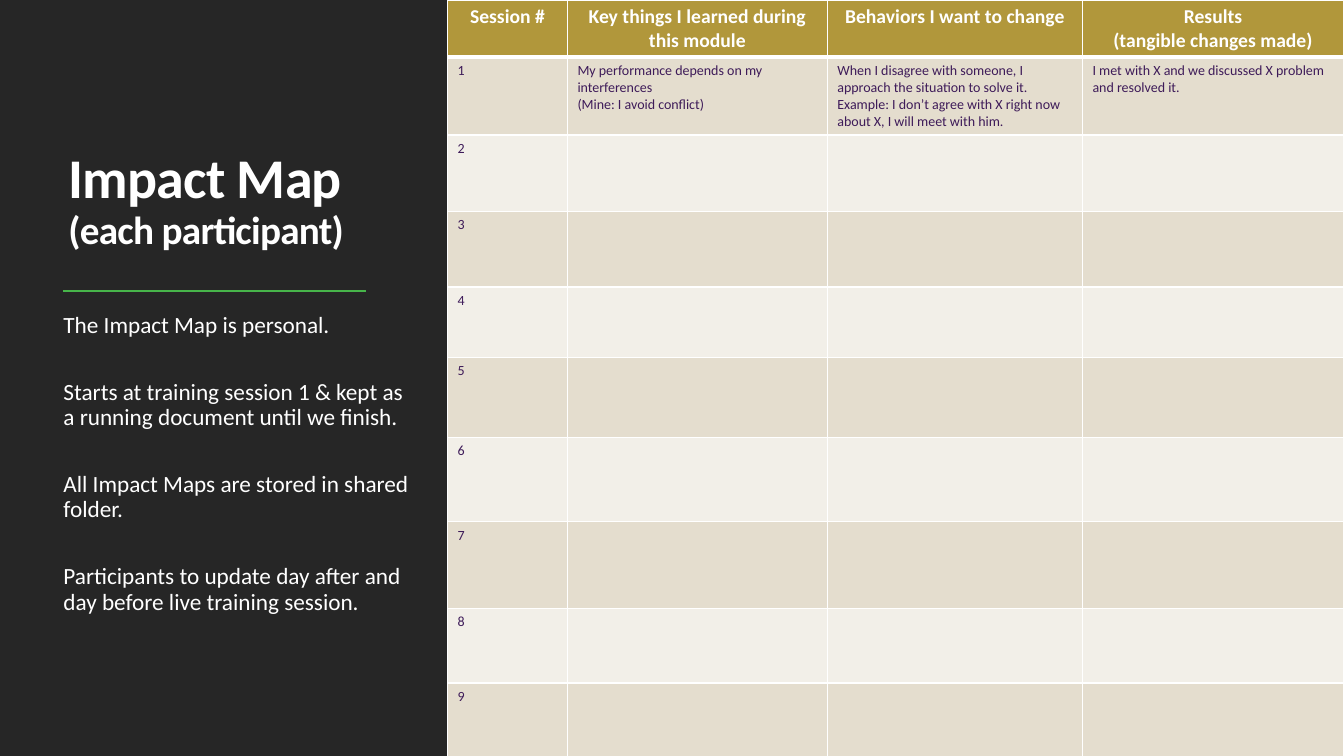
from lxml import etree
from pptx import Presentation
from pptx.dml.color import RGBColor
from pptx.enum.shapes import MSO_CONNECTOR, MSO_SHAPE
from pptx.enum.text import MSO_ANCHOR, MSO_AUTO_SIZE, PP_ALIGN
from pptx.oxml.ns import qn
from pptx.util import Cm, Pt

LEFT, CENTER = PP_ALIGN.LEFT, PP_ALIGN.CENTER
BOTTOM = MSO_ANCHOR.BOTTOM
NO_AUTOFIT = MSO_AUTO_SIZE.NONE
RECTANGLE = MSO_SHAPE.RECTANGLE
STRAIGHT = MSO_CONNECTOR.STRAIGHT

FONT = "Calibri"
WHITE, CHARCOAL, GREEN = "FFFFFF", "262626", "47B54A"
GOLD, PURPLE = "B1973B", "3E1B59"
BANDS = ["E4DDCE", "F2EFE8"]

HEADING = [[("Impact Map ", 40), ("(each participant)", 28)]]
GUIDELINES = [
    "The Impact Map is personal.",
    "Starts at training session 1 & kept as a running document until we finish.",
    "All Impact Maps are stored in shared folder.",
    "Participants to update day after and day before live training session.",
]
HEADERS = [
    ["Session #"],
    ["Key things I learned during this module"],
    ["Behaviors I want to change"],
    ["Results", "(tangible changes made)"],
]
EXAMPLE = [
    ["My performance depends on my interferences", "(Mine: I avoid conflict)"],
    ["When I disagree with someone, I approach the situation to solve it.",
     "Example: I don’t agree with X right now about X, I will meet with him."],
    ["I met with X and we discussed X problem and resolved it."],
]
SESSIONS = 9
COLUMN_WIDTHS = [3.02, 6.55, 6.43, 6.58]
ROW_HEIGHTS = [1.42, 1.96, 1.93, 1.9, 1.78, 2.01, 2.13, 2.18, 1.88, 1.86]

SLIDE_WIDTH, SLIDE_HEIGHT = 33.87, 19.05
PANEL_WIDTH = 11.28
HEADING_BOX = (1.47, 1.07, 8.56, 5.44)
GUIDELINES_BOX = (1.6, 7.77, 8.71, 8.86)
RULE_LEFT, RULE_RIGHT, RULE_TOP = 1.6, 9.22, 7.34


def rgb(hex_color):
    return RGBColor.from_string(hex_color)


def write(frame, paragraphs, size=10, color=WHITE, bold=False, align=LEFT,
          line_spacing=None, space_after=0, tracking=0):
    frame.word_wrap = True
    for index, content in enumerate(paragraphs):
        paragraph = frame.paragraphs[0] if index == 0 else frame.add_paragraph()
        paragraph.alignment = align
        paragraph.line_spacing = line_spacing
        paragraph.space_before = Pt(0)
        paragraph.space_after = Pt(space_after)
        pieces = [(content, size)] if isinstance(content, str) else content
        for text, points in pieces:
            run = paragraph.add_run()
            run.text = text
            run.font.name = FONT
            run.font.size = Pt(points)
            run.font.bold = bold
            run.font.color.rgb = rgb(color)
            if tracking:
                run.font._element.set("spc", str(round(tracking * 100)))


def add_borders(cell, widths):
    properties = cell._tc.get_or_add_tcPr()
    for side, points in zip("LRTB", widths):
        border = etree.SubElement(properties, qn(f"a:ln{side}"), w=str(Pt(points)))
        fill = etree.SubElement(border, qn("a:solidFill"))
        etree.SubElement(fill, qn("a:srgbClr"), val=WHITE)


def add_panel(slide):
    panel = slide.shapes.add_shape(RECTANGLE, 0, 0, Cm(PANEL_WIDTH), Cm(SLIDE_HEIGHT))
    panel.shadow.inherit = False
    panel.fill.solid()
    panel.fill.fore_color.rgb = rgb(CHARCOAL)
    panel.line.fill.background()

    heading = slide.shapes.title
    slide.shapes._spTree.append(heading._element)
    heading.left, heading.top, heading.width, heading.height = map(Cm, HEADING_BOX)
    heading.text_frame.auto_size = NO_AUTOFIT
    heading.text_frame.vertical_anchor = BOTTOM
    write(heading.text_frame, HEADING, bold=True, line_spacing=0.9,
          space_after=6, tracking=-0.5)

    rule = slide.shapes.add_connector(
        STRAIGHT, Cm(RULE_LEFT), Cm(RULE_TOP), Cm(RULE_RIGHT), Cm(RULE_TOP))
    rule.line.color.rgb = rgb(GREEN)
    rule.line.width = Pt(1.5)
    etree.SubElement(rule._element.spPr, qn("a:effectLst"))

    guidelines = slide.shapes.add_textbox(*map(Cm, GUIDELINES_BOX)).text_frame
    guidelines.margin_left = guidelines.margin_right = 0
    write(guidelines, GUIDELINES, size=16.6, line_spacing=0.9, space_after=30)


def add_impact_map(slide):
    blank = [[] for _ in EXAMPLE]
    rows = [HEADERS] + [
        [[str(session)]] + (EXAMPLE if session == 1 else blank)
        for session in range(1, SESSIONS + 1)
    ]
    impact_map = slide.shapes.add_table(
        len(rows), len(HEADERS), Cm(PANEL_WIDTH), 0,
        Cm(sum(COLUMN_WIDTHS)), Cm(sum(ROW_HEIGHTS))).table
    for column, width in zip(impact_map.columns, COLUMN_WIDTHS):
        column.width = Cm(width)
    for row, height in zip(impact_map.rows, ROW_HEIGHTS):
        row.height = Cm(height)
    for r, entries in enumerate(rows):
        is_header = r == 0
        for c, entry in enumerate(entries):
            cell = impact_map.cell(r, c)
            add_borders(cell, (1, 1, 3 if r == 1 else 1, 3 if is_header else 1))
            cell.fill.solid()
            cell.fill.fore_color.rgb = rgb(GOLD if is_header else BANDS[(r - 1) % 2])
            if is_header:
                write(cell.text_frame, entry, size=14, bold=True, align=CENTER)
            else:
                write(cell.text_frame, entry, color=PURPLE)


def main():
    deck = Presentation()
    deck.slide_width, deck.slide_height = Cm(SLIDE_WIDTH), Cm(SLIDE_HEIGHT)
    slide = deck.slides.add_slide(deck.slide_layouts.get_by_name("Title Only"))
    add_panel(slide)
    add_impact_map(slide)
    deck.save("out.pptx")


if __name__ == "__main__":
    main()
